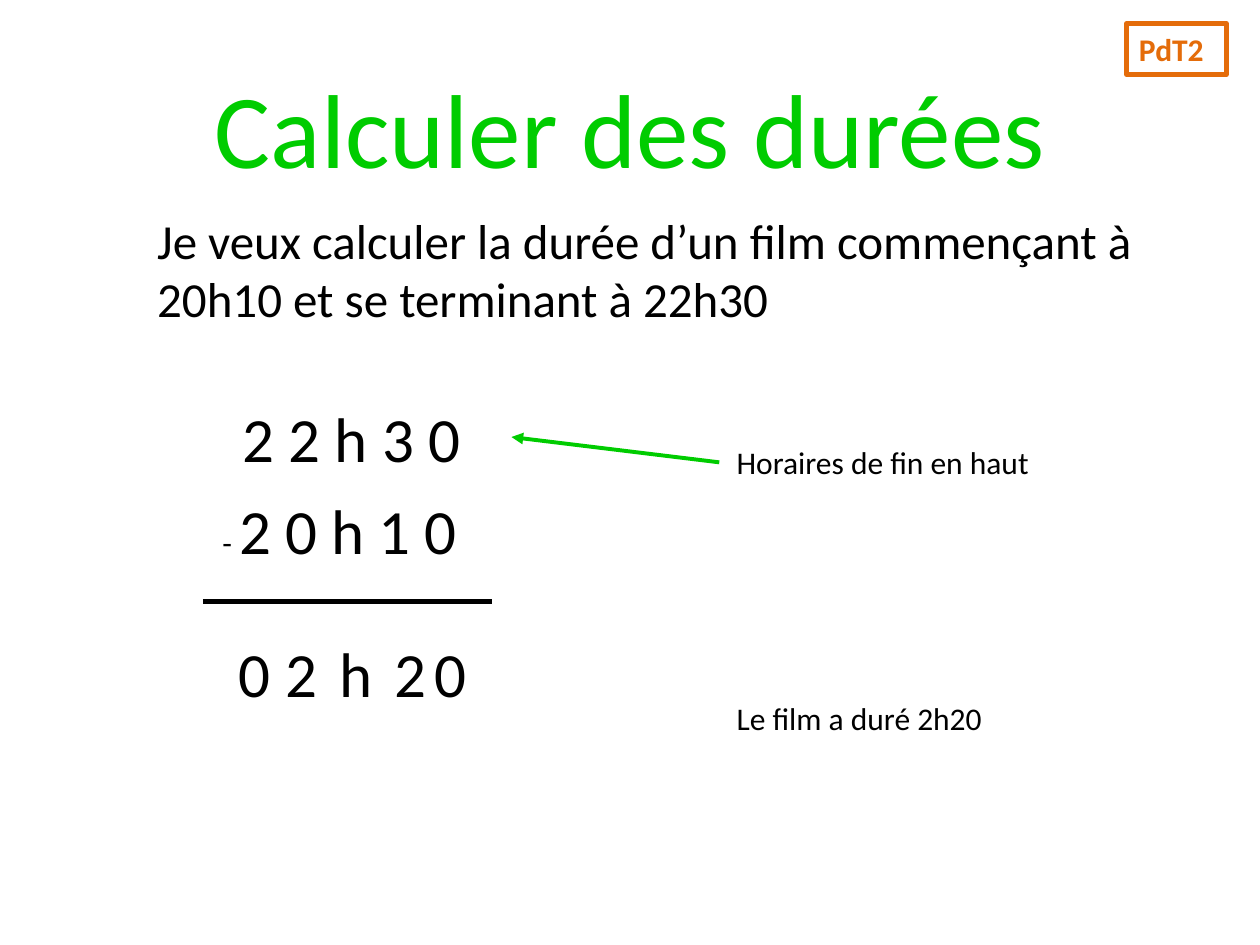
from lxml import etree
from pptx import Presentation
from pptx import util as u
from pptx.dml.color import RGBColor
from pptx.enum import shapes, text
from pptx.oxml.ns import qn

COLORS = {"ink": "000000", "green": "00CC00", "orange": "E46C0A"}


def color(name):
    return RGBColor.from_string(COLORS[name])


def add_text(paragraph, content, size=18, ink="ink", bold=False, font="Calibri"):
    run = paragraph.add_run()
    run.text = content
    run.font.name = font
    run.font.size = u.Pt(size)
    run.font.bold = bold
    run.font.color.rgb = color(ink)


class SlideBuilder:
    def __init__(self, presentation):
        self.slide = presentation.slides.add_slide(presentation.slide_layouts[5])

    def title(self, content, left, top, width, height):
        shape = self.slide.shapes.title
        shape.left, shape.top = u.Cm(left), u.Cm(top)
        shape.width, shape.height = u.Cm(width), u.Cm(height)
        frame = shape.text_frame
        frame.auto_size = text.MSO_AUTO_SIZE.NONE
        frame.vertical_anchor = text.MSO_ANCHOR.MIDDLE
        frame.paragraphs[0].alignment = text.PP_ALIGN.CENTER
        add_text(frame.paragraphs[0], content, size=60, ink="green")

    def text_box(self, runs, left, top, width, height):
        shape = self.slide.shapes.add_textbox(*map(u.Cm, (left, top, width, height)))
        shape.text_frame.word_wrap = True
        for content, size in runs:
            add_text(shape.text_frame.paragraphs[0], content, size=size)

    def badge(self, content, left, top, width, height):
        shape = self.slide.shapes.add_shape(
            shapes.MSO_SHAPE.RECTANGLE, *map(u.Cm, (left, top, width, height)))
        shape.shadow.inherit = False
        shape.fill.background()
        shape.line.color.rgb = color("orange")
        shape.line.width = u.Pt(3)
        frame = shape.text_frame
        frame.word_wrap = True
        frame.vertical_anchor = text.MSO_ANCHOR.TOP
        frame.paragraphs[0].alignment = text.PP_ALIGN.LEFT
        add_text(frame.paragraphs[0], content, ink="orange", bold=True)

    def line(self, start, end, ink, weight, arrow=False):
        connector = self.slide.shapes.add_connector(
            shapes.MSO_CONNECTOR.STRAIGHT, *map(u.Cm, (*start, *end)))
        connector.line.color.rgb = color(ink)
        connector.line.width = u.Pt(weight)
        if arrow:
            outline = connector.line._get_or_add_ln()
            etree.SubElement(outline, qn("a:tailEnd"), type="triangle")
        etree.SubElement(connector._element.spPr, qn("a:effectLst"))


def main():
    presentation = Presentation()
    presentation.slide_width, presentation.slide_height = u.Cm(25.4), u.Cm(19.05)
    builder = SlideBuilder(presentation)

    builder.title("Calculer des durées", 1.27, 0.76, 22.86, 3.56)
    question = ("Je veux calculer la durée d’un film commençant à 20h10 "
                "et se terminant à 22h30")
    builder.text_box([(question, 28)], 2.92, 4.11, 21.01, 2.67)

    builder.text_box([(" ", 18), ("2 2 h 3 0", 36)], 4.5, 7.92, 5.79, 1.8)
    builder.text_box([(" - ", 18), ("2 0 h 1 0", 36)], 4.09, 9.78, 5.79, 1.8)
    builder.line((4.09, 12.12), (9.91, 12.12), "ink", 3)
    builder.line((14.5, 9.32), (10.31, 8.81), "green", 2.25, arrow=True)

    for character, left in zip("02h20", (4.55, 5.51, 6.6, 7.7, 8.51)):
        builder.text_box([(character, 36)], left, 12.67, 0.79, 1.8)

    for note, top in (("Horaires de fin en haut", 8.81), ("Le film a duré 2h20", 13.97)):
        builder.text_box([(note, 18)], 14.6, top, 7.59, 1.02)

    builder.badge("PdT2", 22.71, 0.48, 2.01, 1.02)
    presentation.save("out.pptx")


if __name__ == "__main__":
    main()
